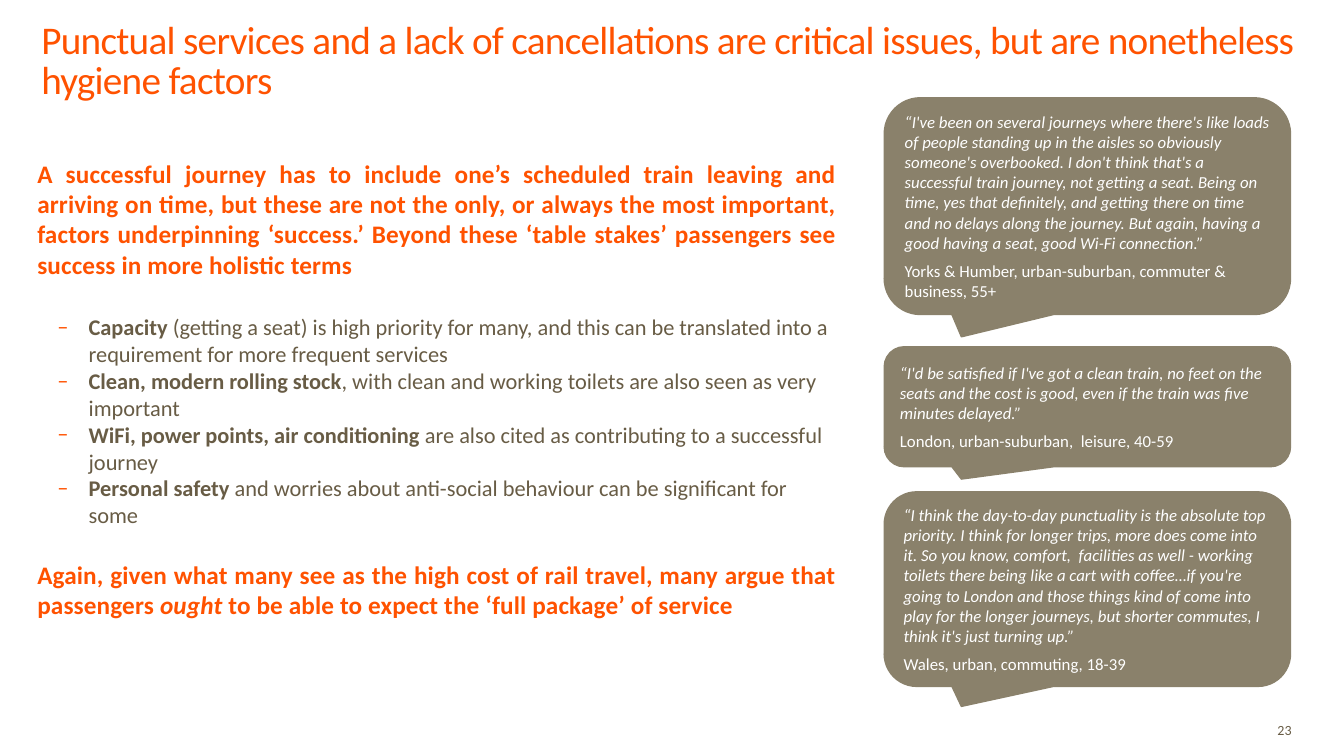
from lxml import etree
from pptx import Presentation
from pptx.dml.color import RGBColor as RGB
from pptx.enum.shapes import MSO_SHAPE as Shape
from pptx.enum.text import MSO_ANCHOR as Anchor, PP_ALIGN as Align
from pptx.oxml.ns import qn
from pptx.util import Inches, Pt

ORANGE, BROWN, TAUPE, WHITE = "FF5200", "685C45", "8A816B", "FFFFFF"

TITLE = ("Punctual services and a lack of cancellations are critical issues, "
         "but are nonetheless hygiene factors")
LEAD = ("A successful journey has to include one’s scheduled train leaving and "
        "arriving on time, but these are not the only, or always the most important, "
        "factors underpinning ‘success.’ Beyond these ‘table stakes’ passengers see "
        "success in more holistic terms")
POINTS = [
    ("Capacity", " (getting a seat) is high priority for many, and this can be "
     "translated into a requirement for more frequent services"),
    ("Clean, modern rolling stock", ", with clean and working toilets are also "
     "seen as very important"),
    ("WiFi, power points, air conditioning ", "are also cited as contributing to "
     "a successful journey"),
    ("Personal safety ", "and worries about anti-social behaviour can be "
     "significant for some"),
]
CLOSE = ["Again, given what many see as the high cost of rail travel, many argue that "
         "passengers ", "ought", " to be able to expect the ‘full package’ of service"]
QUOTES = [
    (0.97, 2.15, "“I've been on several journeys where there's like loads of people "
     "standing up in the aisles so obviously someone's overbooked. I don't think that's "
     "a successful train journey, not getting a seat. Being on time, yes that definitely, "
     "and getting there on time and no delays along the journey. But again, having a good "
     "having a seat, good Wi-Fi connection.”",
     "Yorks & Humber, urban-suburban, commuter & business, 55+"),
    (3.44, 1.19, "“I'd be satisfied if I've got a clean train, no feet on the seats and "
     "the cost is good, even if the train was five minutes delayed.”",
     "London, urban-suburban,  leisure, 40-59"),
    (4.88, 1.93, "“I think the day-to-day punctuality is the absolute top priority. I "
     "think for longer trips, more does come into it. So you know, comfort,  facilities "
     "as well - working toilets there being like a cart with coffee…if you're going to "
     "London and those things kind of come into play for the longer journeys, but shorter "
     "commutes, I think it's just turning up.”",
     "Wales, urban, commuting, 18-39"),
]


def color(code):
    return RGB.from_string(code)


def style(run, size, code, bold=False, italic=False, track=0):
    font = run.font
    font.name, font.size = "Calibri", Pt(size)
    font.bold, font.italic = bold, italic
    font.color.rgb = color(code)
    if track:
        run._r.get_or_add_rPr().set("spc", str(track))


def add_run(para, text, *args, **kw):
    run = para.add_run()
    run.text = text
    style(run, *args, **kw)


def add_box(slide, box, anchor=Anchor.TOP):
    frame = slide.shapes.add_textbox(*map(Inches, box)).text_frame
    frame.word_wrap = True
    frame.vertical_anchor = anchor
    frame.margin_left = frame.margin_right = 0
    frame.margin_top = frame.margin_bottom = 0
    return frame


def add_dash(para):
    props = para._p.get_or_add_pPr()
    props.set("marL", str(Inches(0.51)))
    props.set("indent", str(-Inches(0.31)))
    tint = etree.SubElement(props, qn("a:buClr"))
    etree.SubElement(tint, qn("a:srgbClr")).set("val", ORANGE)
    etree.SubElement(props, qn("a:buFont")).set("typeface", "Calibri")
    etree.SubElement(props, qn("a:buChar")).set("char", "–")


def add_title(slide, box):
    para = add_box(slide, box, Anchor.BOTTOM).paragraphs[0]
    para.line_spacing = Pt(29)
    add_run(para, TITLE, 28, ORANGE, track=-50)


def add_body(slide, box):
    frame = add_box(slide, box)
    lead = frame.paragraphs[0]
    lead.alignment = Align.JUSTIFY
    lead.space_after = Pt(24.4)
    add_run(lead, LEAD, 18, ORANGE, bold=True, track=10)
    for head, rest in POINTS:
        para = frame.add_paragraph()
        add_dash(para)
        add_run(para, head, 16, BROWN, bold=True)
        add_run(para, rest, 16, BROWN)
    last = frame.add_paragraph()
    last.alignment = Align.JUSTIFY
    last.space_before = Pt(22)
    for text in CLOSE:
        add_run(last, text, 18, ORANGE, bold=True, italic=text == "ought", track=10)


def add_quote(slide, box, quote, source):
    shape = slide.shapes.add_shape(Shape.ROUNDED_RECTANGULAR_CALLOUT, *map(Inches, box))
    shape.shadow.inherit = False
    for i, value in enumerate((-0.31, 0.603, 0.167)):
        shape.adjustments[i] = value
    shape.fill.solid()
    shape.fill.fore_color.rgb = color(TAUPE)
    shape.line.color.rgb = color(TAUPE)
    shape.line.width = Pt(1)
    frame = shape.text_frame
    frame.word_wrap = True
    frame.vertical_anchor = Anchor.MIDDLE
    frame.text = f"{quote}\n{source}"
    for para, italic in zip(frame.paragraphs, (True, False)):
        para.alignment = Align.LEFT
        para.space_after = Pt(5.5)
        style(para.runs[0], 12, WHITE, italic=italic)


def add_page(slide, box):
    para = add_box(slide, box, Anchor.MIDDLE).paragraphs[0]
    para.alignment = Align.RIGHT
    add_run(para, "23", 10, BROWN)


def main():
    deck = Presentation()
    deck.slide_width, deck.slide_height = Inches(13.33), Inches(7.5)
    slide = deck.slides.add_slide(deck.slide_layouts[6])
    add_title(slide, (0.41, 0.35, 12.56, 0.67))
    add_page(slide, (12.57, 7.13, 0.24, 0.22))
    add_body(slide, (0.37, 1.57, 7.93, 5.57))
    for top, height, quote, source in QUOTES:
        add_quote(slide, (8.77, top, 4.03, height), quote, source)
    deck.save("out.pptx")


if __name__ == "__main__":
    main()
